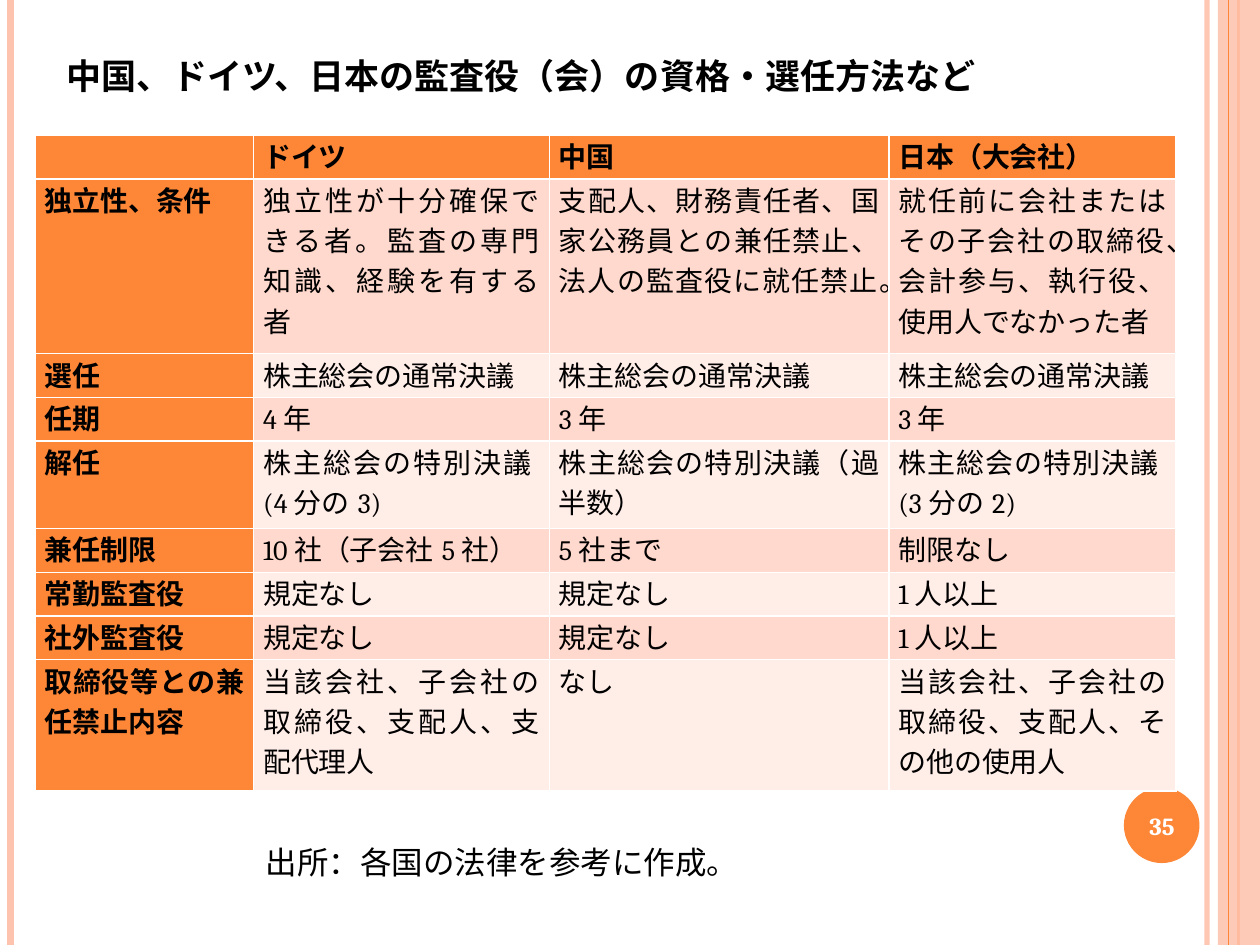
from typing import NamedTuple, Optional

from lxml.etree import SubElement
from pptx import Presentation
from pptx.dml.color import RGBColor
from pptx.enum.shapes import MSO_CONNECTOR as Connector, MSO_SHAPE as Shape
from pptx.enum.text import MSO_ANCHOR as Anchor, MSO_AUTO_SIZE as AutoSize, PP_ALIGN as Align
from pptx.oxml.ns import qn
from pptx.util import Pt

SLIDE_WIDTH, SLIDE_HEIGHT = 720, 540
FONT = "Cambria"
COLORS = {
    "accent": "FE8637",
    "pale": "FEC3AE",
    "odd_row": "FFD9CE",
    "even_row": "FFEDE8",
    "black": "000000",
    "white": "FFFFFF",
}


class Stripe(NamedTuple):
    x: float
    width: float
    color: str
    opacity: Optional[int] = None


class Row(NamedTuple):
    height: float
    texts: tuple


LEFT_STRIPES = [
    Stripe(689.76, 3, "pale", 93),
    Stripe(6, 4.5, "pale"),
    Stripe(707.76, 1.5, "accent"),
]
BAND_STRIPE = Stripe(702, 0.75, "accent")

COLUMN_WIDTHS = (125, 169, 194, 164)
ROWS = [
    Row(25, ("", "ドイツ", "中国", "日本（大会社）")),
    Row(100, ("独立性、条件",
              "独立性が十分確保できる者。監査の専門知識、経験を有する者",
              "支配人、財務責任者、国家公務員との兼任禁止、法人の監査役に就任禁止。",
              "就任前に会社またはその子会社の取締役、会計参与、執行役、使用人でなかった者")),
    Row(25, ("選任",) + ("株主総会の通常決議",) * 3),
    Row(25, ("任期", "4年", "3年", "3年")),
    Row(50, ("解任", "株主総会の特別決議(4分の3)", "株主総会の特別決議（過半数）",
             "株主総会の特別決議(3分の2)")),
    Row(25, ("兼任制限", "10社（子会社5社）", "5社まで", "制限なし")),
    Row(25, ("常勤監査役", "規定なし", "規定なし", "1人以上")),
    Row(25, ("社外監査役", "規定なし", "規定なし", "1人以上")),
    Row(75, ("取締役等との兼任禁止内容",
             "当該会社、子会社の取締役、支配人、支配代理人",
             "なし",
             "当該会社、子会社の取締役、支配人、その他の使用人")),
]


def rgb(name: str) -> RGBColor:
    return RGBColor.from_string(COLORS[name])


def set_opacity(element, percent: int) -> None:
    color = next(element.iter(qn("a:srgbClr")))
    SubElement(color, qn("a:alpha"), val=str(percent * 1000))


def format_text(paragraph, size: float, color: str = "black", bold: bool = False,
                align: Align = Align.LEFT) -> None:
    paragraph.alignment = align
    font = paragraph.font
    font.name, font.size, font.bold = FONT, Pt(size), bold
    font.color.rgb = rgb(color)


def draw_stripe(slide, stripe: Stripe) -> None:
    line = slide.shapes.add_connector(
        Connector.STRAIGHT, Pt(stripe.x), Pt(0), Pt(stripe.x), Pt(SLIDE_HEIGHT))
    line.line.color.rgb = rgb(stripe.color)
    line.line.width = Pt(stripe.width)
    properties = line._element.spPr
    SubElement(properties, qn("a:effectLst"))
    if stripe.opacity:
        set_opacity(properties, stripe.opacity)


def draw_filled(slide, kind: Shape, box: tuple, color: str):
    shape = slide.shapes.add_shape(kind, *map(Pt, box))
    shape.shadow.inherit = False
    shape.fill.solid()
    shape.fill.fore_color.rgb = rgb(color)
    shape.line.fill.background()
    return shape


def draw_frame(slide) -> None:
    """Draw the side stripes, the right-hand band and the page number disc."""
    for stripe in LEFT_STRIPES:
        draw_stripe(slide, stripe)
    band = draw_filled(slide, Shape.RECTANGLE, (696, 0, 24, SLIDE_HEIGHT), "pale")
    set_opacity(band._element.spPr, 87)
    draw_stripe(slide, BAND_STRIPE)
    draw_filled(slide, Shape.OVAL, (642.24, 450, 43.2, 43.2), "accent")
    page_number = slide.shapes.add_textbox(Pt(640), Pt(451.5), Pt(48), Pt(41)).text_frame
    page_number.word_wrap = True
    page_number.vertical_anchor = Anchor.MIDDLE
    page_number.text = "35"
    format_text(page_number.paragraphs[0], 14, "white", True, Align.CENTER)


def cell_color(row: int, column: int) -> str:
    if row == 0 or column == 0:
        return "accent"
    return "odd_row" if row % 2 else "even_row"


def draw_comparison(slide) -> None:
    table = slide.shapes.add_table(
        len(ROWS), len(COLUMN_WIDTHS), Pt(20), Pt(77.2),
        Pt(sum(COLUMN_WIDTHS)), Pt(sum(row.height for row in ROWS))).table
    table.first_col = True
    for column, width in zip(table.columns, COLUMN_WIDTHS):
        column.width = Pt(width)
    for r, row in enumerate(ROWS):
        table.rows[r].height = Pt(row.height)
        for c, text in enumerate(row.texts):
            cell = table.cell(r, c)
            cell.margin_left = cell.margin_right = Pt(5.4)
            cell.margin_top = cell.margin_bottom = Pt(0)
            cell.fill.solid()
            cell.fill.fore_color.rgb = rgb(cell_color(r, c))
            cell.text = text
            format_text(cell.text_frame.paragraphs[0], 16,
                        bold=r == 0 or c == 0, align=Align.JUSTIFY)


def draw_title(slide) -> None:
    title = slide.shapes.title
    title.left, title.top, title.width, title.height = map(Pt, (31, 27.5, 674.5, 31.5))
    title.text = "中国、ドイツ、日本の監査役（会）の資格・選任方法など"
    title.text_frame.vertical_anchor = Anchor.MIDDLE
    title.text_frame.auto_size = AutoSize.SHAPE_TO_FIT_TEXT
    format_text(title.text_frame.paragraphs[0], 20, bold=True)


def draw_source_note(slide) -> None:
    note = slide.shapes.add_textbox(Pt(144.7), Pt(478), Pt(287.3), Pt(29)).text_frame
    note.word_wrap = False
    note.auto_size = AutoSize.SHAPE_TO_FIT_TEXT
    note.text = "出所：各国の法律を参考に作成。"
    format_text(note.paragraphs[0], 18)


def main() -> None:
    deck = Presentation()
    deck.slide_width, deck.slide_height = Pt(SLIDE_WIDTH), Pt(SLIDE_HEIGHT)
    slide = deck.slides.add_slide(deck.slide_layouts[5])
    draw_frame(slide)
    draw_comparison(slide)
    draw_title(slide)
    draw_source_note(slide)
    deck.save("out.pptx")


if __name__ == "__main__":
    main()
